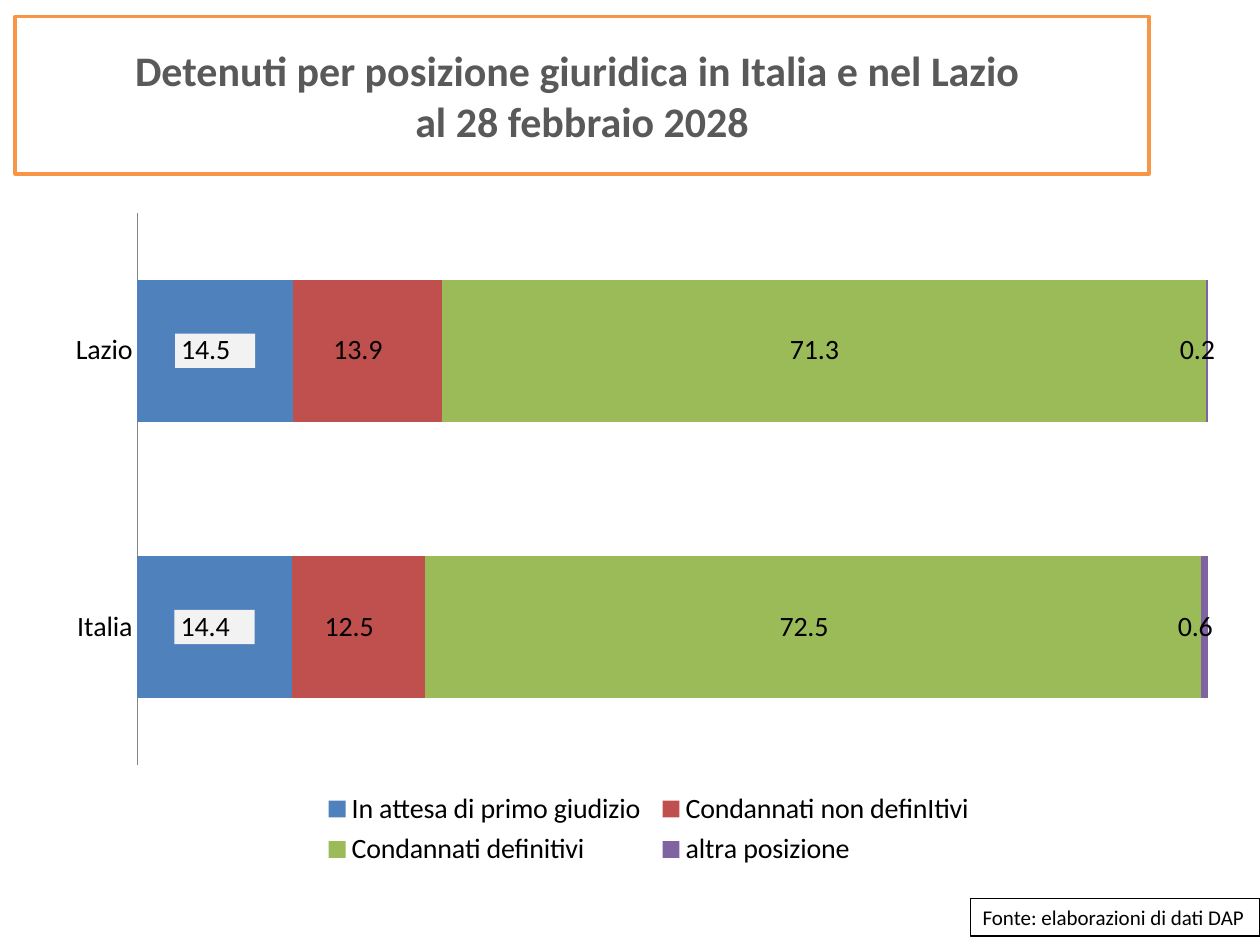
from lxml.etree import fromstring
from pptx import Presentation
from pptx.chart.data import CategoryChartData
from pptx.dml.color import RGBColor
from pptx.enum.chart import XL_CHART_TYPE, XL_LEGEND_POSITION, XL_TICK_MARK
from pptx.enum.shapes import MSO_SHAPE
from pptx.enum.text import MSO_ANCHOR, PP_ALIGN
from pptx.oxml.ns import nsdecls, qn
from pptx.util import Inches, Pt

NUMBER_FORMAT = r'_-* #,##0.0\ _€_-;\-* #,##0.0\ _€_-;_-* "-"??\ _€_-;_-@_-'
CATEGORIES = ["Lazio", "Italia"]
SERIES = [
    ("In attesa di primo giudizio", [14.5, 14.4], "4F81BD", "F2F2F2"),
    ("Condannati non definItivi", [13.9, 12.5], "C0504D", None),
    ("Condannati definitivi", [71.3, 72.5], "9BBB59", None),
    ("altra posizione", [0.2, 0.6], "8064A2", None),
]


def color(value):
    return RGBColor.from_string(value)


def place(element, index, left, top, width, height, inner=False):
    for layout in element.findall(qn("c:layout")):
        element.remove(layout)
    target = '<c:layoutTarget val="inner"/>' if inner else ""
    element.insert(index, fromstring(
        f'<c:layout {nsdecls("c")}><c:manualLayout>{target}'
        '<c:xMode val="edge"/><c:yMode val="edge"/>'
        f'<c:x val="{left}"/><c:y val="{top}"/>'
        f'<c:w val="{width}"/><c:h val="{height}"/>'
        '</c:manualLayout></c:layout>'))


class SlideBuilder:
    """Holds the style and the current slide."""

    font_name = "Calibri"
    text_color = "000000"

    def __init__(self, slide):
        self.slide = slide

    def style_font(self, font, size, font_color=None, bold=False):
        font.name = self.font_name
        font.size = Pt(size)
        font.bold = bold
        font.color.rgb = color(font_color or self.text_color)

    def box(self, text, bounds, line, size, font_color=None, bold=False,
            align=PP_ALIGN.LEFT, wrap=True):
        shape = self.slide.shapes.add_shape(MSO_SHAPE.RECTANGLE, *map(Inches, bounds))
        shape.shadow.inherit = False
        shape.fill.solid()
        shape.fill.fore_color.rgb = color("FFFFFF")
        line_color, line_width = line
        shape.line.color.rgb = color(line_color)
        shape.line.width = Pt(line_width)
        text_frame = shape.text_frame
        text_frame.word_wrap = wrap
        text_frame.vertical_anchor = MSO_ANCHOR.MIDDLE
        text_frame.text = text
        paragraph = text_frame.paragraphs[0]
        paragraph.alignment = align
        for run in paragraph.runs:
            self.style_font(run.font, size, font_color, bold)

    def stacked_bars(self, categories, series_rows, bounds, size):
        data = CategoryChartData(number_format="0.0")
        data.categories = categories
        for name, values, _, _ in series_rows:
            data.add_series(name, values)
        chart = self.slide.shapes.add_chart(
            XL_CHART_TYPE.BAR_STACKED_100, *map(Inches, bounds), data).chart
        self.style_font(chart.font, size)
        chart.has_title = False
        chart.has_legend = True
        chart.legend.position = XL_LEGEND_POSITION.BOTTOM
        chart.legend.include_in_layout = False
        self.style_font(chart.legend.font, size)
        place(chart.legend._element, 1, 0.22, 0.87, 0.56, 0.13)
        plot_area = chart._chartSpace.chart.plotArea
        place(plot_area, 0, 0.07, 0.02, 0.9, 0.82, inner=True)

        category_axis = chart.category_axis
        category_axis.reverse_order = True
        category_axis.major_tick_mark = XL_TICK_MARK.NONE
        category_axis.format.line.color.rgb = color("868686")
        chart.value_axis.has_major_gridlines = False
        chart.value_axis.visible = False

        plot = chart.plots[0]
        plot.gap_width = 95
        plot.overlap = 100
        plot.vary_by_categories = False
        for series, (_, _, fill, label_fill) in zip(plot.series, series_rows):
            series.format.fill.solid()
            series.format.fill.fore_color.rgb = color(fill)
            self.value_labels(series.data_labels, size, label_fill)

    def value_labels(self, labels, size, fill):
        labels.show_value = True
        labels.number_format = NUMBER_FORMAT
        labels.number_format_is_linked = False
        self.style_font(labels.font, size)
        if fill:
            labels._element.find(qn("c:numFmt")).addnext(fromstring(
                f'<c:spPr {nsdecls("c", "a")}><a:solidFill>'
                f'<a:srgbClr val="{fill}"/></a:solidFill></c:spPr>'))


def main():
    presentation = Presentation()
    presentation.slide_width = Inches(10)
    presentation.slide_height = Inches(7.5)
    builder = SlideBuilder(presentation.slides.add_slide(presentation.slide_layouts[6]))
    builder.box("Detenuti per posizione giuridica in Italia e nel Lazio \val 28 febbraio 2028",
                (0.12, 0.13, 9, 1.25), ("F79646", 2), 24, "595959", True, PP_ALIGN.CENTER)
    builder.box("Fonte: elaborazioni di dati DAP", (7.7, 7.13, 2.3, 0.3),
                ("000000", 0.75), 12, wrap=False)
    builder.stacked_bars(CATEGORIES, SERIES, (0.43, 1.58, 9.44, 5.35), 16)
    presentation.save("out.pptx")


if __name__ == "__main__":
    main()
